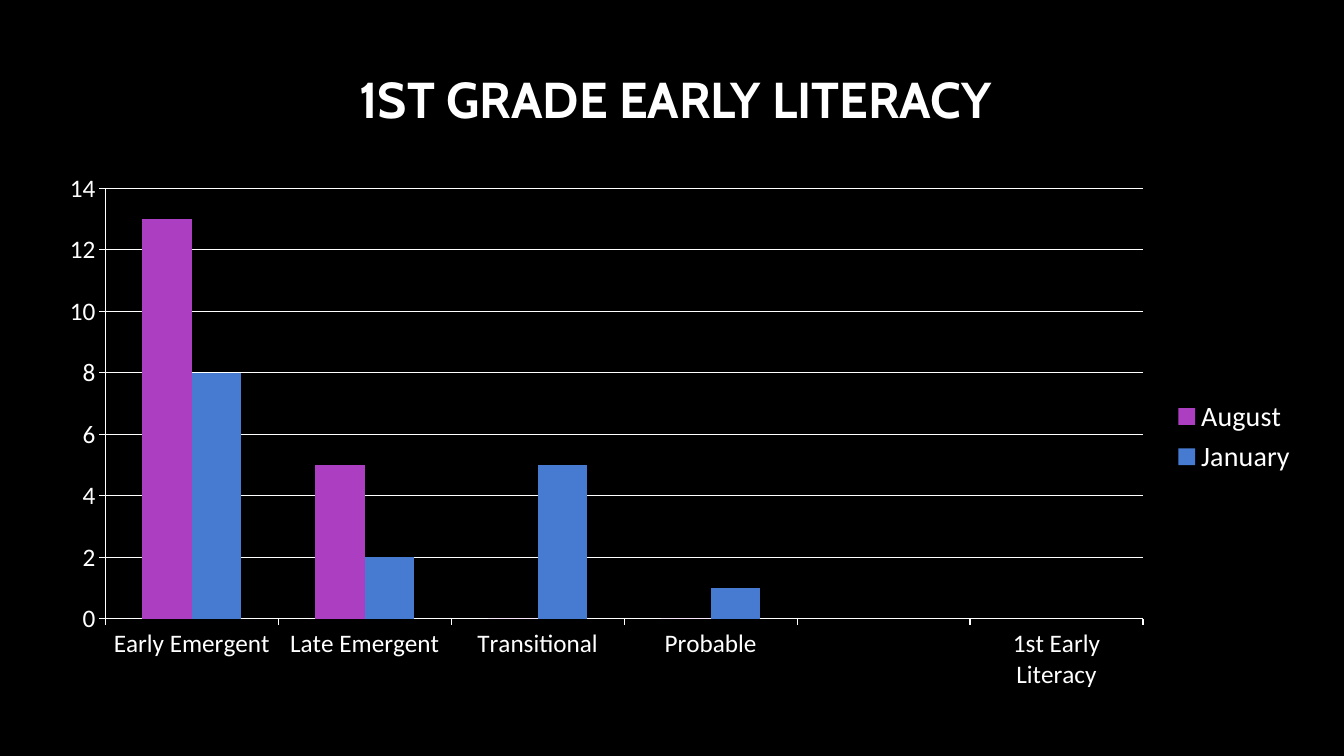
from lxml import etree
from pptx import Presentation
from pptx.chart.data import CategoryChartData
from pptx.dml.color import RGBColor
from pptx.enum import chart as charts, text as texts
from pptx.oxml import ns
from pptx.util import Pt

HEADING = "1ST GRADE EARLY LITERACY"
STAGES = ["Early Emergent", "Late Emergent", "Transitional", "Probable", "", "1st Early Literacy"]
MONTHS = [
    ("August", (13, 5, 0, 0, None, None), "AC3EC1"),
    ("January", (8, 2, 5, 1, None, None), "477BD1"),
]
PLOT_AREA = {"x": 0.05, "y": 0.05, "w": 0.82, "h": 0.78}
WHITE, BLACK = "FFFFFF", "000000"
SLIDE_W, SLIDE_H = 960, 540
HEADING_BOX = (25, 25, 915, 90)
CHART_BOX = (30, 115, 904, 394)


def paint(color_format, value):
    color_format.rgb = RGBColor.from_string(value)


def fill(target, value):
    target.fill.solid()
    paint(target.fill.fore_color, value)


def style(font, size, face="Calibri", color=WHITE, bold=False):
    font.size, font.name, font.bold = Pt(size), face, bold
    paint(font.color, color)


def write(frame, words, align=texts.PP_ALIGN.CENTER, anchor=texts.MSO_ANCHOR.MIDDLE, **font_format):
    frame.word_wrap = True
    frame.vertical_anchor = anchor
    paragraph = frame.paragraphs[0]
    paragraph.alignment = align
    run = paragraph.add_run()
    run.text = words
    style(run.font, **font_format)


def rule(line):
    paint(line.color, WHITE)
    line.width = Pt(0.75)


def place_plot(chart, box):
    plot_area = chart.plots[0]._element.getparent()
    layout = etree.Element(ns.qn("c:layout"))
    manual = etree.SubElement(layout, ns.qn("c:manualLayout"))
    settings = [("layoutTarget", "inner"), ("xMode", "edge"), ("yMode", "edge"), *box.items()]
    for tag, value in settings:
        etree.SubElement(manual, ns.qn(f"c:{tag}")).set("val", str(value))
    plot_area.insert(0, layout)


def add_heading(slide):
    heading = slide.shapes.title
    heading.left, heading.top, heading.width, heading.height = map(Pt, HEADING_BOX)
    write(heading.text_frame, HEADING, size=36, face="Cabin", bold=True)


def add_literacy_chart(slide):
    scores = CategoryChartData()
    scores.categories = STAGES
    for month, counts, _ in MONTHS:
        scores.add_series(month, counts)
    chart = slide.shapes.add_chart(
        charts.XL_CHART_TYPE.COLUMN_CLUSTERED, *map(Pt, CHART_BOX), scores
    ).chart
    chart.has_title = False
    style(chart.font, 10)

    columns = chart.plots[0]
    columns.vary_by_categories = False
    columns.gap_width, columns.overlap = 150, 0
    for series, (_, _, color) in zip(columns.series, MONTHS):
        fill(series.format, color)
        series.invert_if_negative = False

    for axis in (chart.category_axis, chart.value_axis):
        style(axis.tick_labels.font, 18)
        axis.major_tick_mark = charts.XL_TICK_MARK.OUTSIDE
        rule(axis.format.line)
    counts_axis = chart.value_axis
    counts_axis.minimum_scale, counts_axis.maximum_scale, counts_axis.major_unit = 0, 14, 2
    counts_axis.has_major_gridlines = True
    rule(counts_axis.major_gridlines.format.line)

    chart.has_legend = True
    chart.legend.position = charts.XL_LEGEND_POSITION.RIGHT
    chart.legend.include_in_layout = False
    style(chart.legend.font, 20)
    place_plot(chart, PLOT_AREA)


def main():
    deck = Presentation()
    deck.slide_width, deck.slide_height = Pt(SLIDE_W), Pt(SLIDE_H)
    slide = deck.slides.add_slide(deck.slide_layouts[5])
    fill(slide.background, BLACK)
    add_heading(slide)
    add_literacy_chart(slide)
    deck.save("out.pptx")


if __name__ == "__main__":
    main()
